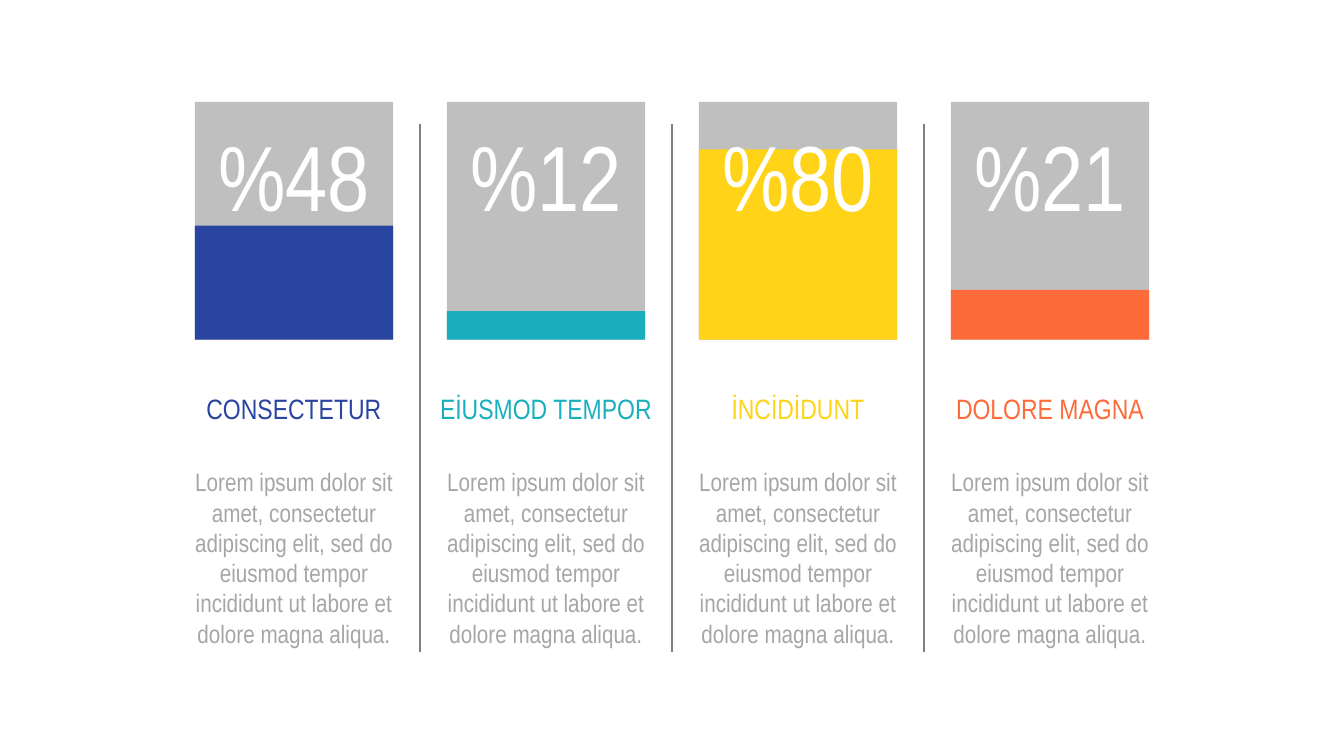
from pptx import Presentation
from pptx.dml.color import RGBColor
from pptx.enum import shapes, text
from pptx.oxml.ns import qn
from pptx.util import Pt
from lxml import etree

COLORS = {
    "blue": "2944A1", "teal": "19AFBF", "yellow": "FFD418", "orange": "FE6B3A",
    "track": "BFBFBF", "divider": "808080", "body": "A6A6A6", "white": "FFFFFF",
}
FONT = "Arial Narrow"
BODY = ("Lorem ipsum dolor sit amet, consectetur adipiscing elit, sed do "
        "eiusmod tempor incididunt ut labore et dolore magna aliqua.")
COLUMNS = [
    (48, "CONSECTETUR", "blue"),
    (12, "EİUSMOD TEMPOR", "teal"),
    (80, "İNCİDİDUNT", "yellow"),
    (21, "DOLORE MAGNA", "orange"),
]
LEFT, TOP, COL_W, COL_H = 120, 72.7, 180, 395
BAR_W, BAR_H = 141.7, 170


def rgb(name):
    return RGBColor.from_string(COLORS[name])


def add_rect(s, x, y, w, h, color):
    sp = s.shapes.add_shape(shapes.MSO_SHAPE.RECTANGLE, Pt(x), Pt(y), Pt(w), Pt(h))
    sp.shadow.inherit = False
    sp.fill.solid()
    sp.fill.fore_color.rgb = rgb(color)
    sp.line.fill.background()


def add_text(s, x, y, w, h, content, size, color, inset=7.2):
    tf = s.shapes.add_textbox(Pt(x), Pt(y), Pt(w), Pt(h)).text_frame
    frame = {
        "word_wrap": True,
        "auto_size": text.MSO_AUTO_SIZE.SHAPE_TO_FIT_TEXT,
        "vertical_anchor": text.MSO_ANCHOR.MIDDLE,
        "margin_left": Pt(inset), "margin_right": Pt(inset),
    }
    for key, value in frame.items():
        setattr(tf, key, value)
    p = tf.paragraphs[0]
    p.alignment = text.PP_ALIGN.CENTER
    r = p.add_run()
    r.text = content
    for key, value in {"name": FONT, "size": Pt(size)}.items():
        setattr(r.font, key, value)
    r.font.color.rgb = rgb(color)


def add_divider(s, x, y, h):
    line = s.shapes.add_connector(
        shapes.MSO_CONNECTOR.STRAIGHT, Pt(x), Pt(y), Pt(x), Pt(y + h))
    line.line.color.rgb = rgb("divider")
    line.line.width = Pt(1.5)
    etree.SubElement(line._element.spPr, qn("a:effectLst"))


def add_column(s, x, y, w, percent, heading, color):
    # Bar filled from the bottom in proportion to its value
    bar_x = x + (w - BAR_W) / 2
    level = BAR_H * percent / 100
    add_rect(s, bar_x, y, BAR_W, BAR_H, "track")
    add_rect(s, bar_x, y + BAR_H - level, BAR_W, level, color)
    # Value, heading and description
    add_text(s, x, y + 8.7, w, 87.1, f"%{percent}", 66, "white")
    add_text(s, x, y + 203.1, w, 31.5, heading, 20, color)
    add_text(s, x, y + 256.3, w, 138.5, BODY, 18, "body", inset=14.4)


def add_infographic(s, x, y, w, h):
    col_w = w / len(COLUMNS)
    for i, (percent, heading, color) in enumerate(COLUMNS):
        col_x = x + i * col_w
        if i:
            add_divider(s, col_x, y + 16, h - 18)
        add_column(s, col_x, y, col_w, percent, heading, color)


def main():
    prs = Presentation()
    prs.slide_width, prs.slide_height = Pt(960), Pt(540)
    s = prs.slides.add_slide(prs.slide_layouts[6])
    add_infographic(s, LEFT, TOP, COL_W * len(COLUMNS), COL_H)
    prs.save("out.pptx")


if __name__ == "__main__":
    main()
